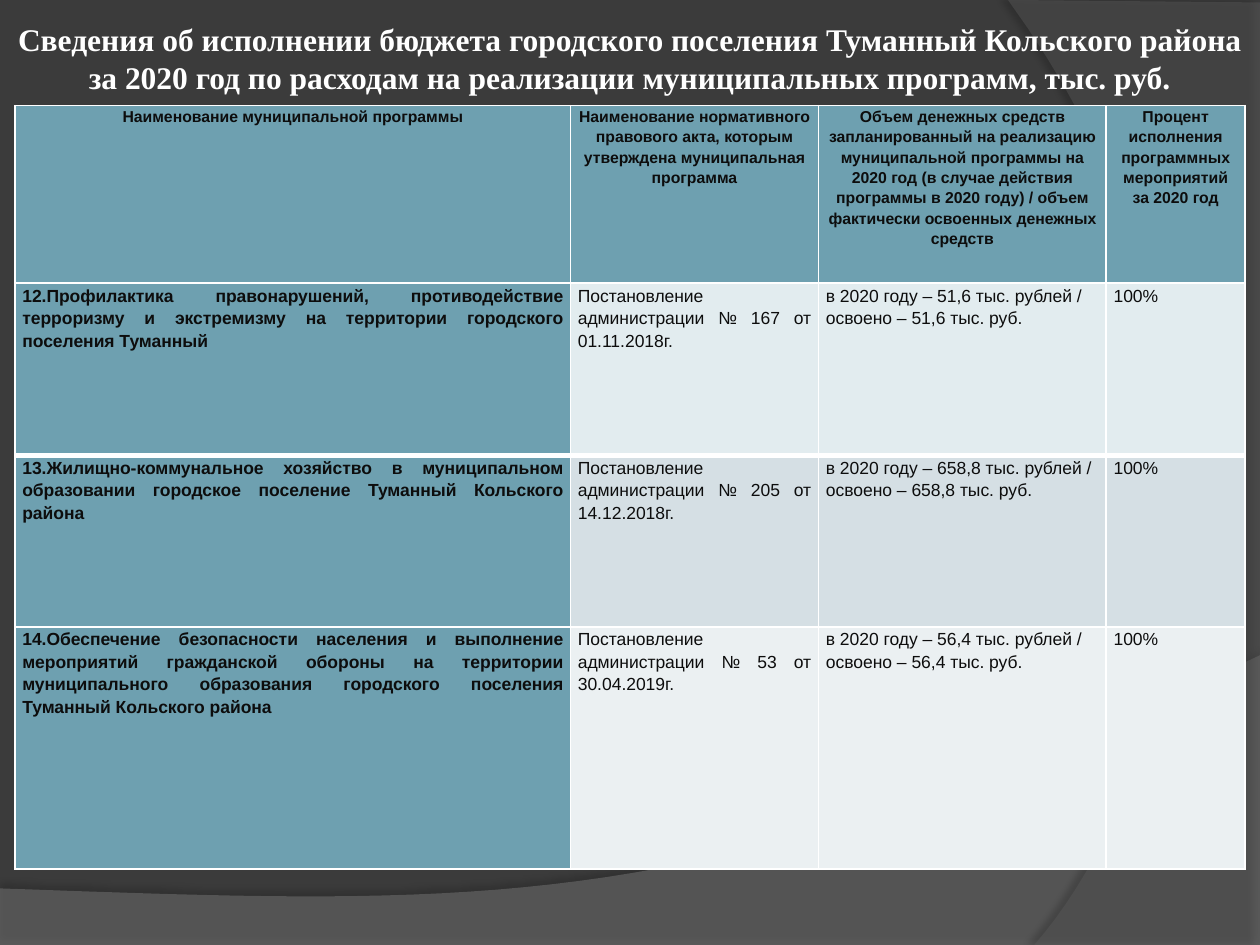
from dataclasses import dataclass

from lxml import etree
from pptx import Presentation
from pptx.dml.color import RGBColor
from pptx.enum.text import MSO_ANCHOR, PP_ALIGN
from pptx.oxml.ns import qn
from pptx.util import Cm, Pt

CENTER, JUSTIFY = PP_ALIGN.CENTER, PP_ALIGN.JUSTIFY
MIDDLE, TOP = MSO_ANCHOR.MIDDLE, MSO_ANCHOR.TOP


@dataclass(frozen=True)
class Theme:
    background: str = "3B3B3B"
    wave: str = "7F7F7F"
    arc: str = "5E5E5E"
    shadow: str = "000000"
    white: str = "FFFFFF"
    ink: str = "0D0D0D"
    accent: str = "6EA0B0"
    bands: tuple = ("E2ECEF", "D5DFE4", "EBF0F2")
    title_font: str = "Times New Roman"
    table_font: str = "Arial"
    title_size: int = 18
    header_size: int = 9
    body_size: int = 10
    border: int = 1
    heavy_border: int = 3


theme = Theme()


def format_text(text_frame, font_name, size, color, bold, alignment, line_spacing):
    for paragraph in text_frame.paragraphs:
        paragraph.alignment = alignment
        paragraph.line_spacing = line_spacing
        for run in paragraph.runs:
            run.font.name = font_name
            run.font.size = Pt(size)
            run.font.bold = bold
            run.font.color.rgb = RGBColor.from_string(color)


def add_table(slide, top, row_heights, rows, size, heavy_row):
    column_widths = (11.2, 5, 5.8, 2.8)
    frame = slide.shapes.add_table(
        len(rows), len(column_widths), Cm(0.3), Cm(top),
        Cm(sum(column_widths)), Cm(sum(row_heights)))
    table = frame.table
    for column, width in zip(table.columns, column_widths):
        column.width = Cm(width)
    for row_index, (texts, height) in enumerate(zip(rows, row_heights)):
        table.rows[row_index].height = Cm(height)
        for column_index, (text, fill, bold, alignment) in enumerate(texts):
            cell = table.cell(row_index, column_index)
            cell.margin_left = cell.margin_right = Cm(0.15)
            cell.margin_top = cell.margin_bottom = 0
            cell.vertical_anchor = TOP
            cell.text_frame.text = text
            format_text(cell.text_frame, theme.table_font, size, theme.ink,
                        bold, alignment, 1.15)
            properties = cell._tc.get_or_add_tcPr()
            for side in ("lnL", "lnR", "lnT", "lnB"):
                heavy = (side == "lnB" and row_index == heavy_row
                         or side == "lnT" and row_index == heavy_row + 1)
                width = theme.heavy_border if heavy else theme.border
                line = etree.SubElement(properties, qn(f"a:{side}"), w=str(Pt(width)))
                solid = etree.SubElement(line, qn("a:solidFill"))
                etree.SubElement(solid, qn("a:srgbClr"), val=theme.white)
            cell.fill.solid()
            cell.fill.fore_color.rgb = RGBColor.from_string(fill)


presentation = Presentation()
presentation.slide_width = Cm(25.4)
presentation.slide_height = Cm(19.05)
slide = presentation.slides.add_slide(presentation.slide_layouts[5])
slide.background.fill.solid()
slide.background.fill.fore_color.rgb = RGBColor.from_string(theme.background)

wave_curve = ((25.4, 13.21), (14.2, 18.52), (9.93, 18.26), (0, 17.91))
arc_curve = ((20.85, 19.05), (23.75, 15.72), (25.86, 7.62), (20.32, 0))
decorations = (
    (wave_curve, ((0, 19.07), (25.4, 19.07)), theme.wave, 45, 35, 3.5, 270),
    (arc_curve, ((25.4, 0.05), (25.4, 19.05)), theme.arc, 40, 45, 4, 180),
)
curve_steps = 40
for curve, corners, color, opacity, shadow_opacity, distance, direction in decorations:
    points = []
    for step in range(curve_steps + 1):
        t = step / curve_steps
        weights = ((1 - t) ** 3, 3 * t * (1 - t) ** 2, 3 * t ** 2 * (1 - t), t ** 3)
        points.append(tuple(
            Cm(sum(weight * point[axis] for weight, point in zip(weights, curve)))
            for axis in (0, 1)))
    points += [(Cm(x), Cm(y)) for x, y in corners]
    builder = slide.shapes.build_freeform(*points[0])
    builder.add_line_segments(points[1:], close=True)
    shape = builder.convert_to_shape()
    shape.shadow.inherit = False
    shape.line.fill.background()
    shape.fill.solid()
    shape.fill.fore_color.rgb = RGBColor.from_string(color)
    fill_color = shape._element.spPr.find(f".//{qn('a:srgbClr')}")
    etree.SubElement(fill_color, qn("a:alpha"), val=str(opacity * 1000))
    effects = shape._element.spPr.find(qn("a:effectLst"))
    shadow = etree.SubElement(
        effects, qn("a:outerShdw"), blurRad=str(Pt(4)), dist=str(Pt(distance)),
        dir=str(direction * 60000), algn="ctr", rotWithShape="0")
    shadow_color = etree.SubElement(shadow, qn("a:srgbClr"), val=theme.shadow)
    etree.SubElement(shadow_color, qn("a:alpha"), val=str(shadow_opacity * 1000))

title = slide.shapes.title
slide.shapes._spTree.append(title._element)
title.left, title.top, title.width, title.height = 0, 0, Cm(25.4), Cm(2.34)
title_frame = title.text_frame
title_frame.text = (
    "Сведения об исполнении бюджета городского поселения Туманный Кольского района "
    "за 2020 год по расходам на реализации муниципальных программ, тыс. руб.")
title_frame.word_wrap = True
title_frame.vertical_anchor = MIDDLE
title_frame.margin_left = title_frame.margin_right = Cm(0.13)
title_frame.margin_top = title_frame.margin_bottom = Cm(0.13)
format_text(title_frame, theme.title_font, theme.title_size, theme.white, True, CENTER, 1.0)

headings = (
    "Наименование муниципальной программы",
    "Наименование нормативного правового акта, которым утверждена муниципальная программа",
    "Объем денежных средств запланированный на реализацию муниципальной программы "
    "на 2020 год (в случае действия программы в 2020 году) / объем фактически "
    "освоенных денежных средств",
    "Процент исполнения программных мероприятий за 2020 год",
)
header_row = [(heading, theme.accent, True, CENTER) for heading in headings]
add_table(slide, 2.13, (3.6,), [header_row], theme.header_size, 0)

programs = (
    ("12.Профилактика правонарушений, противодействие терроризму и экстремизму "
     "на территории городского поселения Туманный", "167 от 01.11.2018г.", "51,6"),
    ("13.Жилищно-коммунальное хозяйство в муниципальном образовании городское "
     "поселение Туманный Кольского района", "205 от 14.12.2018г.", "658,8"),
    ("14.Обеспечение безопасности населения и выполнение мероприятий гражданской "
     "обороны на территории муниципального образования городского поселения "
     "Туманный Кольского района", "53 от 30.04.2019г.", "56,4"),
)
program_rows = []
for (name, decree, amount), band in zip(programs, theme.bands):
    details = (
        f"Постановление администрации № {decree}",
        f"в 2020 году – {amount} тыс. рублей /\nосвоено – {amount} тыс. руб.",
        "100%",
    )
    program_rows.append([(name, theme.accent, True, JUSTIFY)]
                        + [(detail, band, False, JUSTIFY) for detail in details])
add_table(slide, 5.72, (3.46, 3.46, 4.88), program_rows, theme.body_size, 0)

presentation.save("out.pptx")
